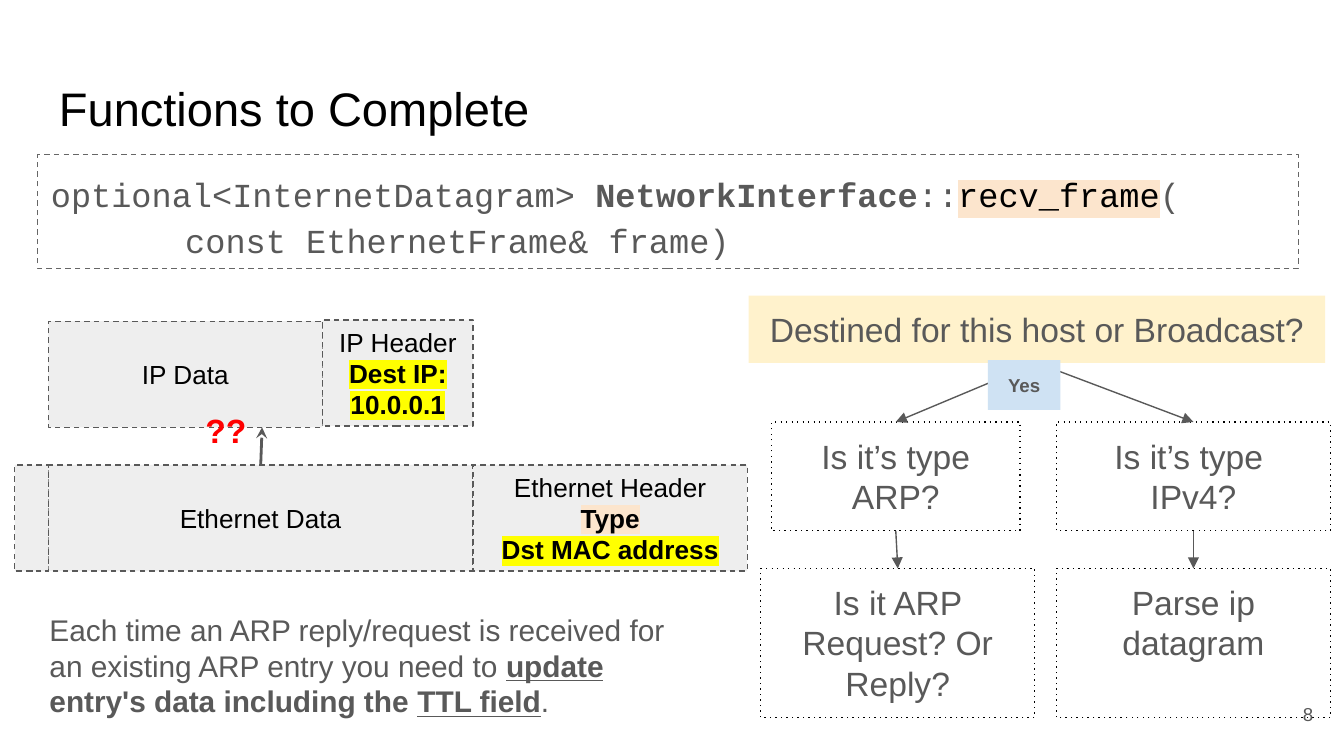
from lxml import etree
from pptx import Presentation
from pptx.dml.color import RGBColor
from pptx.enum.shapes import MSO_CONNECTOR, MSO_SHAPE
from pptx.enum.text import MSO_ANCHOR, PP_ALIGN
from pptx.oxml.ns import qn
from pptx.util import Inches, Pt

RECT, STRAIGHT = MSO_SHAPE.RECTANGLE, MSO_CONNECTOR.STRAIGHT
TOP, MIDDLE = MSO_ANCHOR.TOP, MSO_ANCHOR.MIDDLE
LEFT, CENTER, RIGHT = PP_ALIGN.LEFT, PP_ALIGN.CENTER, PP_ALIGN.RIGHT
SIDE_TOP, SIDE_BOTTOM = 0, 2

COLORS = {
    "black": "000000", "text": "595959", "frame": "666666", "red": "FF0000",
    "packet": "EEEEEE", "question": "FFF2CC", "answer": "CFE2F3",
    "peach": "FCE5CD", "yellow": "FFFF00",
}

# Column edges and rows (top, height), in inches
SLIDE_W = 10
SLIDE_H = SLIDE_W * 9 / 16
PACKET_X = (0.11, 0.36, 2.4, 3.52, 5.56)
FLOW_X, FLOW_W = (5.66, 7.86), 2.04
IP_ROW, HEADER_ROW, ETHERNET_ROW = (2.39, 0.79), (2.38, 0.79), (3.46, 0.79)
TYPE_ROW, ACTION_ROW = (3.14, 0.81), (4.23, 1.11)


def rgb(name):
    return RGBColor.from_string(COLORS[name])


def run(text, bold=False, underline=False, color=None, highlight=None):
    """Describe one run of text."""
    return text, bold, underline, color, highlight


def add_run(p, piece, size, color, font):
    text, bold, underline, own_color, highlight = piece
    r = p.add_run()
    r.text = text
    r.font.size, r.font.name = Pt(size), font
    r.font.bold, r.font.underline = bold, underline
    r.font.color.rgb = rgb(own_color or color)
    if highlight:
        hl = etree.Element(qn("a:highlight"))
        etree.SubElement(hl, qn("a:srgbClr"), val=COLORS[highlight])
        r._r.rPr.find(qn("a:solidFill")).addnext(hl)


def write(s, paragraphs, size, color="text", align=CENTER, anchor=TOP, font="Arial"):
    """Fill a shape with paragraphs, each a list of runs; None is a line break."""
    tf = s.text_frame
    tf.word_wrap, tf.vertical_anchor = True, anchor
    tf.margin_left = tf.margin_right = tf.margin_top = tf.margin_bottom = Inches(0.1)
    for i, pieces in enumerate(paragraphs):
        p = tf.paragraphs[0] if i == 0 else tf.add_paragraph()
        p.alignment = align
        for piece in pieces:
            if piece is None:
                p.add_line_break()
            else:
                add_run(p, piece, size, color, font)


def add_text(slide, x, y, w, h, paragraphs, size, **style):
    s = slide.shapes.add_textbox(Inches(x), Inches(y), Inches(w), Inches(h))
    write(s, paragraphs, size, **style)


def add_box(slide, x, y, w, h, fill=None, line=None, dash="dash"):
    s = slide.shapes.add_shape(RECT, Inches(x), Inches(y), Inches(w), Inches(h))
    s.shadow.inherit = False
    if fill:
        s.fill.solid()
        s.fill.fore_color.rgb = rgb(fill)
    else:
        s.fill.background()
    if line:
        s.line.color.rgb, s.line.width = rgb(line), Pt(0.75)
        etree.SubElement(s.line._get_or_add_ln(), qn("a:prstDash"), val=dash)
    else:
        s.line.fill.background()
    return s


def add_packet_part(slide, column, row, paragraphs, span=1):
    x = PACKET_X[column]
    s = add_box(slide, x, row[0], PACKET_X[column + span] - x, row[1], "packet", "text")
    write(s, paragraphs, 14, color="black", anchor=MIDDLE)
    return s


def add_step(slide, x, w, row, paragraphs):
    s = add_box(slide, x, row[0], w, row[1], line="black", dash="dot")
    write(s, paragraphs, 18)
    return s


def add_arrow(slide, start, end, width=0.75, end_tag="tailEnd", kind="triangle"):
    """Draw an arrow to a (shape, side) pair, from another pair or a point."""
    c = slide.shapes.add_connector(STRAIGHT, 0, 0, 0, 0)
    if isinstance(start[0], float):
        c.begin_x, c.begin_y = Inches(start[0]), Inches(start[1])
    else:
        c.begin_connect(*start)
    c.end_connect(*end)
    c.line.color.rgb, c.line.width = rgb("text"), Pt(width)
    etree.SubElement(c.line._get_or_add_ln(), qn(f"a:{end_tag}"), type=kind)
    etree.SubElement(c._element.spPr, qn("a:effectLst"))


def add_signature(slide):
    s = add_box(slide, 0.28, 1.15, 9.38, 0.85, line="frame")
    write(s, [[
        run("optional<InternetDatagram> "), run("NetworkInterface", bold=True),
        run("::"), run("recv_frame", color="black", highlight="peach"), run("("),
        None, run("\t\tconst EthernetFrame& frame)"),
    ]], 18, align=LEFT, font="Courier New")
    p = s.text_frame.paragraphs[0]
    p.line_spacing, p.space_after = 1.15, Pt(12)


def add_packets(slide):
    # IP datagram above, Ethernet frame below
    add_packet_part(slide, 1, IP_ROW, [[run("IP Data")]])
    add_packet_part(slide, 2, HEADER_ROW, [
        [run("IP Header")],
        [run("Dest IP: 10.0.0.1", bold=True, highlight="yellow")]])
    data = add_packet_part(slide, 1, ETHERNET_ROW, [[run("Ethernet Data")]], span=2)
    add_packet_part(slide, 3, ETHERNET_ROW, [
        [run("Ethernet Header")],
        [run("Type", bold=True, highlight="peach")],
        [run("Dst MAC address", bold=True, highlight="yellow")]])
    add_packet_part(slide, 0, ETHERNET_ROW, [])
    add_arrow(slide, (1.95, sum(IP_ROW)), (data, SIDE_TOP), 1.5, "headEnd", "stealth")
    add_text(slide, 1.43, 2.95, 0.68, 0.5, [[run("??", bold=True)]], 18,
             color="red", align=LEFT)


def add_decisions(slide):
    question = add_box(slide, 5.57, 2.2, 4.29, 0.5, "question")
    write(question, [[run("Destined for this host or Broadcast?")]], 18)
    arp = add_step(slide, 5.74, 1.85, TYPE_ROW, [[run("Is it’s type ARP?")]])
    reply = add_step(slide, FLOW_X[0], FLOW_W, ACTION_ROW,
                     [[run("Is it ARP Request? Or Reply?")]])
    ipv4 = add_step(slide, FLOW_X[1], FLOW_W, TYPE_ROW,
                    [[run("Is it’s type ")], [run("IPv4?")]])
    parse_ip = add_step(slide, FLOW_X[1], FLOW_W, ACTION_ROW,
                        [[run("Parse ip datagram")]])
    for start, end in ((question, arp), (question, ipv4), (arp, reply), (ipv4, parse_ip)):
        add_arrow(slide, (start, SIDE_BOTTOM), (end, SIDE_TOP))
    # Answer label over the fork
    answer = add_box(slide, 7.35, 2.68, 0.54, 0.37, "answer")
    write(answer, [[run("Yes", bold=True)]], 10)


def main():
    prs = Presentation()
    prs.slide_width, prs.slide_height = Inches(SLIDE_W), Inches(SLIDE_H)
    slide = prs.slides.add_slide(prs.slide_layouts[6])

    add_text(slide, 0.34, 0.49, 9.32, 0.63, [[run("Functions to Complete")]], 25.2,
             color="black", align=LEFT)
    add_signature(slide)
    add_packets(slide)
    add_decisions(slide)

    # Slide number and closing remark
    add_text(slide, 9.27, 5.1, 0.6, 0.43, [[run("8")]], 10, align=RIGHT, anchor=MIDDLE)
    add_text(slide, 0.27, 4.45, 4.97, 1.01, [[
        run("Each time an ARP reply/request is received for an existing ARP entry "
            "you need to "),
        run("update", bold=True, underline=True), run(" "),
        run("entry's data including the ", bold=True),
        run("TTL field", bold=True, underline=True), run("."),
    ]], 16, align=LEFT)
    prs.save("out.pptx")


if __name__ == "__main__":
    main()
